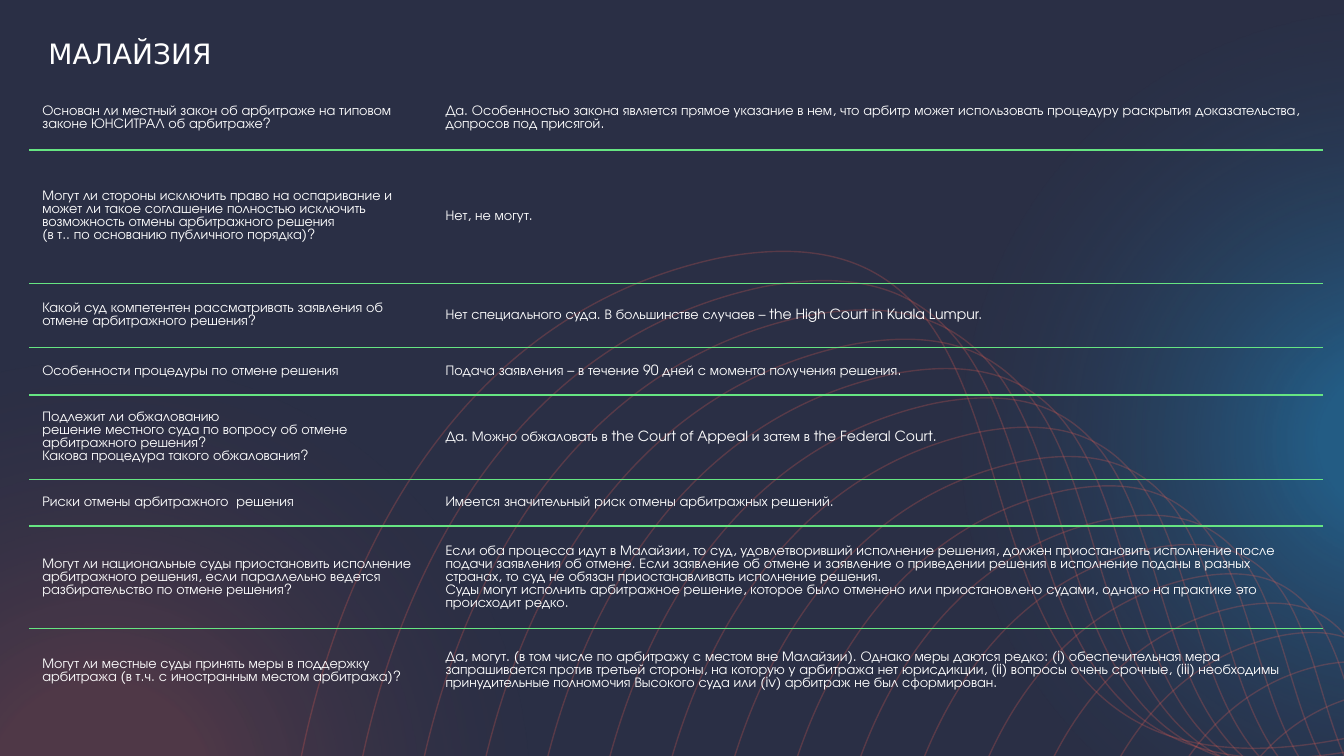
from lxml.etree import SubElement
from pptx import Presentation
from pptx.dml.color import RGBColor
from pptx.enum.shapes import MSO_SHAPE as Preset
from pptx.enum.text import MSO_ANCHOR as Anchor, MSO_AUTO_SIZE as AutoSize
from pptx.oxml.ns import qn
from pptx.util import Inches, Pt

NIGHT, BLUE, CORAL, GREEN, WHITE = "2A2F45", "1B94D5", "FF6455", "66E582", "FFFFFF"
PLAIN_TABLE = "{2D5ABB26-0587-4C30-8999-92F81FD0307C}"

# Loop outline as shares of its box: start point, then four Bézier segments
LOOP_START = (0.55, 0.12)
LOOP_SEGMENTS = [
    [(0.63, -0.27), (0.83, -0.08), (0.87, 0.35)],
    [(0.88, 0.79), (0.77, 1.03), (0.42, 1)],
    [(0.27, 0.98), (-0.1, 0.74), (-0.01, 0.44)],
    [(0.09, 0.13), (0.47, 0.61), LOOP_START],
]

# Row height in percent of the slide, question, answer
ROWS = [
    (8.53, "Основан ли местный закон об арбитраже на типовом законе ЮНСИТРАЛ об арбитраже?",
     "Да. Особенностью закона является прямое указание в нем, что арбитр может использовать "
     "процедуру раскрытия доказательства, допросов под присягой."),
    (17.6, "Могут ли стороны исключить право на оспаривание и может ли такое соглашение "
     "полностью исключить возможность отмены арбитражного решения\n"
     "(в т.. по основанию публичного порядка)?",
     "Нет, не могут."),
    (8.53, "Какой суд компетентен рассматривать заявления об отмене арбитражного решения?",
     "Нет специального суда. В большинстве случаев – the High Court in Kuala Lumpur."),
    (6.27, "Особенности процедуры по отмене решения",
     "Подача заявления – в течение 90 дней с момента получения решения."),
    (11.2, "Подлежит ли обжалованию\n"
     "решение местного суда по вопросу об отмене арбитражного решения?\n"
     "Какова процедура такого обжалования?",
     "Да. Можно обжаловать в the Court of Appeal и затем в the Federal Court."),
    (6.13, "Риски отмены арбитражного  решения",
     "Имеется значительный риск отмены арбитражных решений."),
    (13.6, "Могут ли национальные суды приостановить исполнение арбитражного решения, "
     "если параллельно ведется разбирательство по отмене решения?",
     "Если оба процесса идут в Малайзии, то суд, удовлетворивший исполнение решения, должен "
     "приостановить исполнение после подачи заявления об отмене. Если заявление об отмене и "
     "заявление о приведении решения в исполнение поданы в разных странах, то суд не обязан "
     "приостанавливать исполнение решения.\n"
     "Суды могут исполнить арбитражное решение, которое было отменено или приостановлено "
     "судами, однако на практике это происходит редко."),
    (11.2, "Могут ли местные суды принять меры в поддержку арбитража "
     "(в т.ч. с иностранным местом арбитража)?",
     "Да, могут. (в том числе по арбитражу с местом вне Малайзии). Однако меры даются редко: "
     "(i) обеспечительная мера запрашивается против третьей стороны, на которую у арбитража "
     "нет юрисдикции, (ii) вопросы очень срочные, (iii) необходимы принудительные полномочия "
     "Высокого суда или (iv) арбитраж не был сформирован."),
]


def color(value):
    return RGBColor.from_string(value)


def add_element(parent, tag, **attributes):
    return SubElement(parent, qn(tag), {name: str(value) for name, value in attributes.items()})


def add_alpha(color_element, percent):
    add_element(color_element, "a:alpha", val=percent * 1000)


class SlideBuilder:
    """Draws on one slide; all lengths are percent of the slide's width or height."""

    title_font, body_font = "DejaVu Sans", "TeX Gyre Adventor"

    def __init__(self, presentation):
        self.width, self.height = presentation.slide_width, presentation.slide_height
        self.slide = presentation.slides.add_slide(presentation.slide_layouts[6])
        self.shapes = self.slide.shapes
        background = self.slide.background.fill
        background.solid()
        background.fore_color.rgb = color(NIGHT)

    def x(self, percent):
        return round(self.width * percent / 100)

    def y(self, percent):
        return round(self.height * percent / 100)

    def box(self, left, top, width, height):
        return self.x(left), self.y(top), self.x(width), self.y(height)

    def style_text(self, paragraph, font_name, size):
        for run in paragraph.runs:
            run.font.name, run.font.size = font_name, Pt(size)
            run.font.color.rgb = color(WHITE)

    def glow(self, left, top, tint, start, alpha):
        """Add a circle that fades from a tint to nothing."""
        circle = self.shapes.add_shape(Preset.OVAL, *self.box(left, top, 63.98, 113.73))
        circle.shadow.inherit = False
        circle.line.fill.background()
        circle.fill.gradient()
        gradient = circle.fill._fill._gradFill
        for child in list(gradient):
            gradient.remove(child)
        stops = add_element(gradient, "a:gsLst")
        for position, value, opacity in ((start, tint, alpha), (81, NIGHT, 0)):
            stop = add_element(stops, "a:gs", pos=position * 1000)
            add_alpha(add_element(stop, "a:srgbClr", val=value), opacity)
        radial = add_element(gradient, "a:path", path="circle")
        add_element(radial, "a:fillToRect", l=50000, t=50000, r=50000, b=50000)

    def loop(self, *bounds):
        """Add a freeform that fills the bounds, then bend its outline into curves."""
        left, top, width, height = self.box(*bounds)
        right, bottom = left + width, top + height
        builder = self.shapes.build_freeform(left, top)
        builder.add_line_segments([(right, top), (right, bottom), (left, bottom)])
        shape = builder.convert_to_shape()
        outline = shape._element.find(".//" + qn("a:path"))
        for child in list(outline):
            outline.remove(child)
        steps = [("a:moveTo", [LOOP_START])]
        steps += [("a:cubicBezTo", segment) for segment in LOOP_SEGMENTS]
        for tag, points in steps:
            step = add_element(outline, tag)
            for u, v in points:
                add_element(step, "a:pt", x=round(width * u), y=round(height * v))
        add_element(outline, "a:close")
        shape.rotation = 62
        shape.shadow.inherit = False
        shape.fill.background()
        shape.line.width = Pt(1)
        shape.line.color.rgb = color(CORAL)
        add_alpha(shape.line._ln.find(".//" + qn("a:srgbClr")), 22)

    def title(self, text, left, top, width, height):
        text_frame = self.shapes.add_textbox(*self.box(left, top, width, height)).text_frame
        text_frame.text = text
        text_frame.word_wrap = False
        text_frame.auto_size = AutoSize.SHAPE_TO_FIT_TEXT
        text_frame.vertical_anchor = Anchor.MIDDLE
        text_frame.margin_left = Inches(0.19)
        self.style_text(text_frame.paragraphs[0], self.title_font, 20)

    def cell(self, cell, text, edges):
        cell.text_frame.text = text
        cell.vertical_anchor = Anchor.MIDDLE
        cell.margin_left = cell.margin_right = Inches(0.13)
        cell.margin_top = cell.margin_bottom = Inches(0.07)
        for paragraph in cell.text_frame.paragraphs:
            paragraph.line_spacing = Pt(9.3)
            self.style_text(paragraph, self.body_font, 10)
        properties = cell._tc.get_or_add_tcPr()
        for edge in edges:
            line = add_element(properties, edge, w=Pt(1))
            add_element(add_element(line, "a:solidFill"), "a:srgbClr", val=GREEN)
        cell.fill.background()

    def table(self, rows, left, top, column_widths):
        total = sum(height for height, *_ in rows)
        frame = self.shapes.add_table(len(rows), len(column_widths),
                                      *self.box(left, top, sum(column_widths), total))
        table = frame.table
        table.first_row = table.horz_banding = False
        table._tbl.tblPr.find(qn("a:tableStyleId")).text = PLAIN_TABLE
        for column, width in zip(table.columns, column_widths):
            column.width = self.x(width)
        for index, (height, *texts) in enumerate(rows):
            table.rows[index].height = self.y(height)
            edges = ["a:lnB"] if index < len(rows) - 1 else []
            for cell, text in zip(table.rows[index].cells, texts):
                self.cell(cell, text, edges)


def main():
    presentation = Presentation()
    presentation.slide_width, presentation.slide_height = Inches(13.33), Inches(7.5)
    builder = SlideBuilder(presentation)
    builder.glow(71.55, 1.47, BLUE, start=12, alpha=44)
    builder.glow(-24.6, 47.87, CORAL, start=18, alpha=17)
    for step in range(1, 17):
        builder.loop(93.1 - 4.42 * step, 92.93 - 4.12 * step,
                     37.5 + 3.83 * step, 69.3 + 7.08 * step)
    builder.title("МАЛАЙЗИЯ", 2.18, 3.73, 15.08, 6.67)
    builder.table(ROWS, 2.18, 11.33, (30, 66.24))
    presentation.save("out.pptx")


if __name__ == "__main__":
    main()
